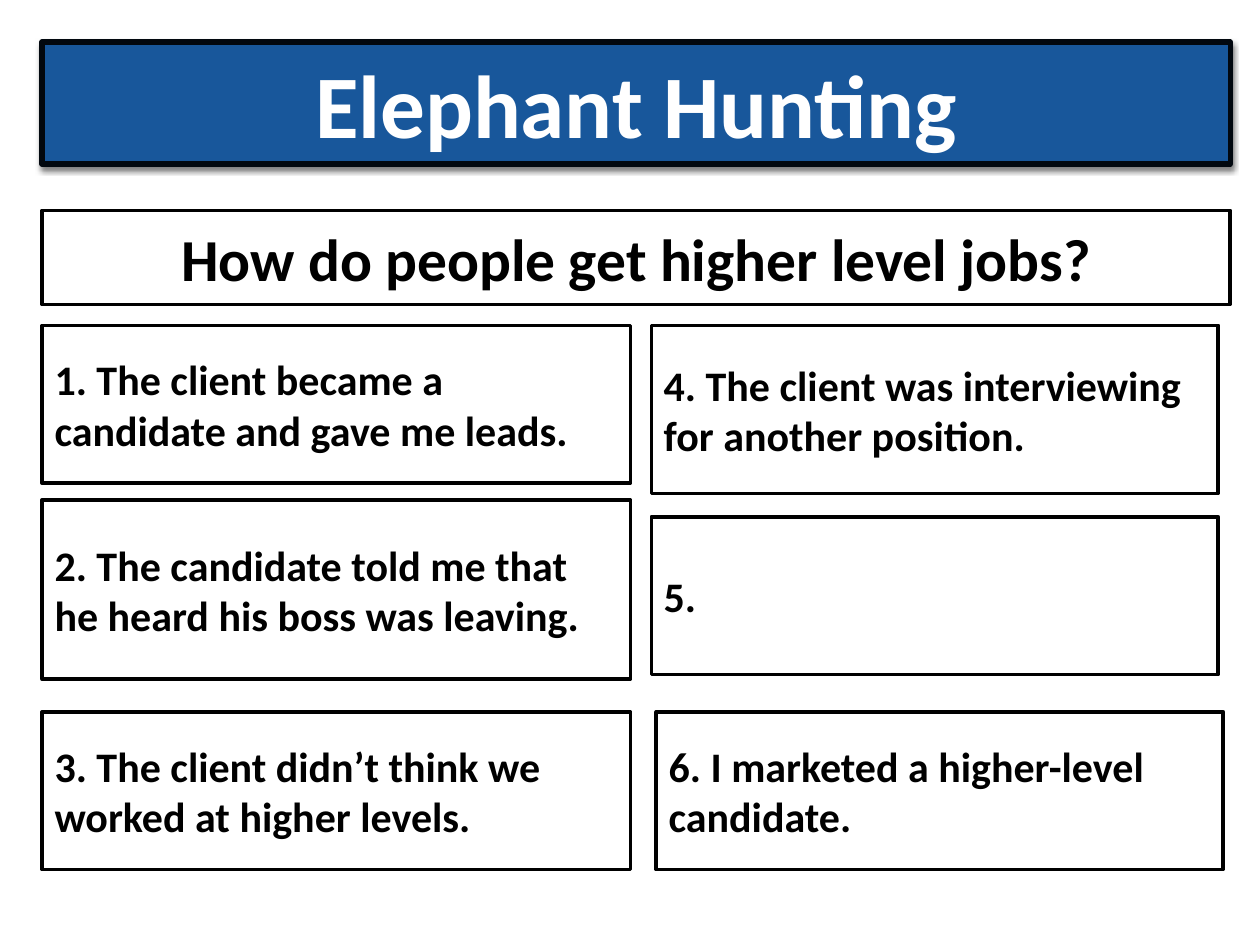
from lxml import etree
from pptx import Presentation
from pptx import util as u
from pptx.dml.color import RGBColor
from pptx.enum import shapes, text
from pptx.oxml import ns


def colour(value):
    return RGBColor.from_string(value)


def apply(target, values):
    for name, value in values.items():
        setattr(target, name, value)


class Board:
    font = "Calibri"
    ink = "000000"
    paper = "FFFFFF"

    def __init__(self, slide):
        self.slide = slide

    def box(self, words, area, size, align=text.PP_ALIGN.LEFT,
            fill=paper, edge=ink, weight=2, text_colour=ink):
        panel = self.slide.shapes.add_shape(
            shapes.MSO_SHAPE.RECTANGLE, *(u.Cm(length) for length in area))
        panel.shadow.inherit = False
        panel.fill.solid()
        panel.fill.fore_color.rgb = colour(fill)
        panel.line.color.rgb = colour(edge)
        panel.line.width = u.Pt(weight)
        frame = panel.text_frame
        apply(frame, {"word_wrap": True,
                      "vertical_anchor": text.MSO_ANCHOR.MIDDLE})
        paragraph = frame.paragraphs[0]
        paragraph.alignment = align
        run = paragraph.add_run()
        run.text = words
        apply(run.font, {"name": self.font, "size": u.Pt(size), "bold": True})
        run.font.color.rgb = colour(text_colour)
        return panel

    def banner(self, words, area):
        panel = self.box(words, area, 51, text.PP_ALIGN.CENTER,
                         "18579B", "02080F", 3, self.paper)
        effects = panel.element.spPr.find(ns.qn("a:effectLst"))
        shadow = etree.SubElement(
            effects, ns.qn("a:outerShdw"), blurRad=str(u.Pt(3)),
            dist=str(u.Pt(2)), dir="5400000", rotWithShape="0")
        tint = etree.SubElement(shadow, ns.qn("a:srgbClr"), val=self.ink)
        etree.SubElement(tint, ns.qn("a:alpha"), val="50000")

    def question(self, words, area):
        self.box(words, area, 34, text.PP_ALIGN.CENTER)

    def answer(self, words, area):
        self.box(words, area, 24)


def main():
    deck = Presentation()
    apply(deck, {"slide_width": u.Cm(25.4), "slide_height": u.Cm(19.05)})
    board = Board(deck.slides.add_slide(deck.slide_layouts[6]))

    left, full_width = 0.85, 23.95
    left_width, right_width = 11.86, 11.43
    right, bottom_right = 13.13, 13.23
    top_row, bottom_row, height = 6.56, 14.35, 3.18

    board.banner("Elephant Hunting", (left, 0.85, full_width, 2.46))
    board.question("How do people get higher level jobs?",
                   (left, 4.24, full_width, 1.9))

    answers = [
        ("1. The client became a candidate and gave me leads.",
         (left, top_row, left_width, height)),
        ("2. The candidate told me that he heard his boss was leaving.",
         (left, 10.08, left_width, 3.61)),
        ("3. The client didn’t think we worked at higher levels.",
         (left, bottom_row, left_width, height)),
        ("4. The client was interviewing for another position.",
         (right, top_row, right_width, 3.39)),
        ("5.", (right, 10.42, right_width, height)),
        ("6. I marketed a higher-level candidate.",
         (bottom_right, bottom_row, right_width, height)),
    ]
    for words, area in answers:
        board.answer(words, area)

    deck.save("out.pptx")


if __name__ == "__main__":
    main()
